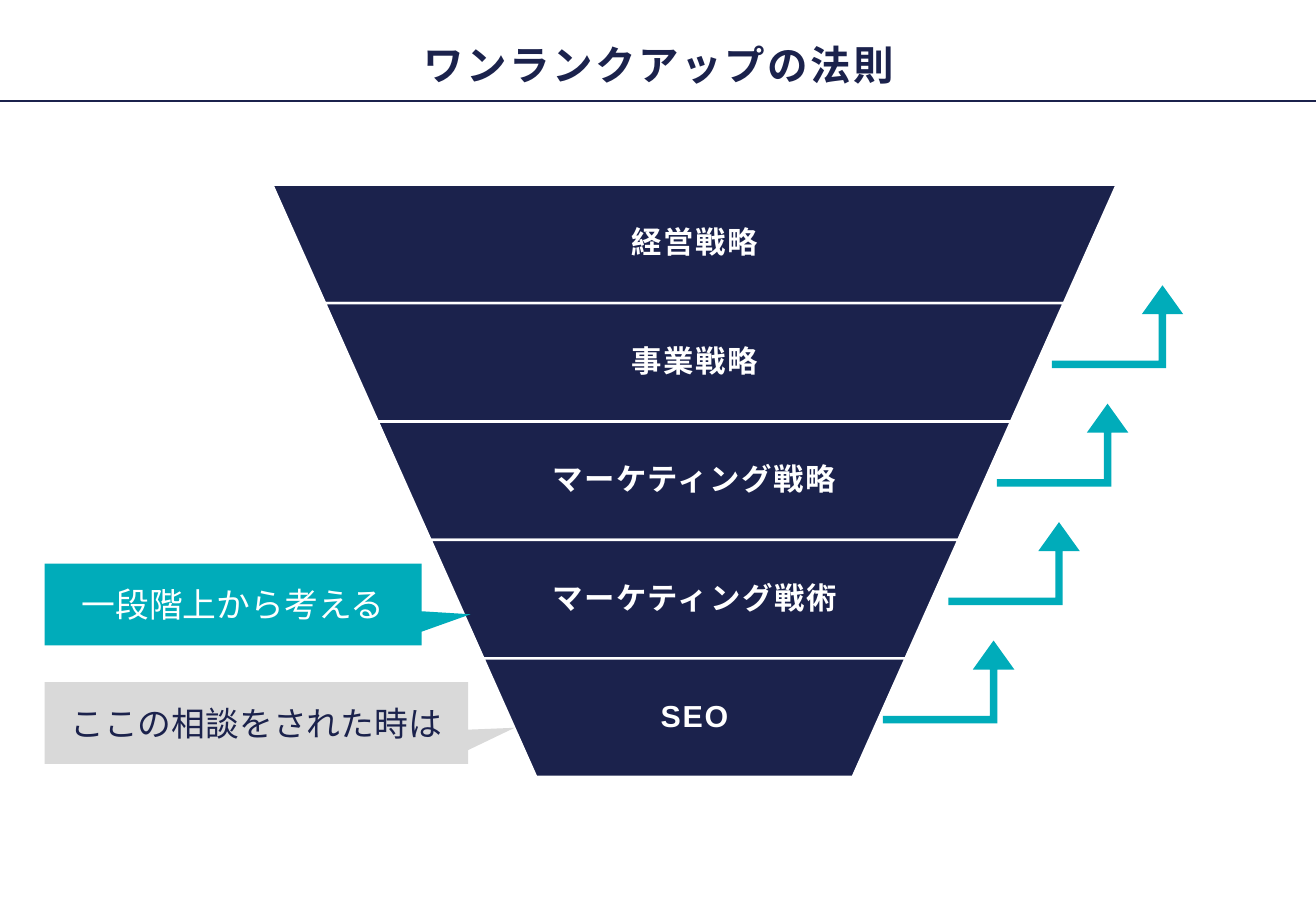
import dataclasses

import lxml.etree
import pptx
import pptx.dml.color
import pptx.enum.shapes
import pptx.enum.text
import pptx.oxml.ns
import pptx.util

SHAPES = pptx.enum.shapes.MSO_SHAPE
COLORS = {"navy": "1B224C", "teal": "00ACBA", "gray": "D9D9D9", "white": "FFFFFF"}
FONT = "Arial"

# Grid: the funnel's top edge spans 16 columns and it narrows one column a side per row
SLIDE_W, SLIDE_H = 10.83, 7.5
LEFT, TOP = 2.24, 1.52
TOP_COLS = 16
COL, ROW = 6.95 / TOP_COLS, SLIDE_H * 0.13


@dataclasses.dataclass
class Callout:
    text: str
    row: float
    cols: float
    fill: str
    color: str
    tip: tuple[float, float]


@dataclasses.dataclass
class Arrow:
    col: float
    row: float


BANDS = ["経営戦略", "事業戦略", "マーケティング戦略", "マーケティング戦術", "SEO"]
CALLOUTS = [
    Callout("一段階上から考える", 3.2, 7.14, "teal", "white", (0.63, 0.12)),
    Callout("ここの相談をされた時は", 4.2, 8.02, "gray", "navy", (0.61, 0.06)),
]
ARROWS = [Arrow(col, i + 0.85) for i, col in enumerate([14.77, 13.73, 12.81, 11.57])]


def x(col: float) -> int:
    return pptx.util.Inches(LEFT + col * COL)


def y(row: float) -> int:
    return pptx.util.Inches(TOP + row * ROW)


def rgb(name: str) -> pptx.dml.color.RGBColor:
    return pptx.dml.color.RGBColor.from_string(COLORS[name])


def write(sp, text: str, size: int, color: str, bold: bool = False,
          tracking: float = 0, line_spacing: float = 1.0) -> None:
    tf = sp.text_frame
    tf.vertical_anchor = pptx.enum.text.MSO_ANCHOR.MIDDLE
    p = tf.paragraphs[0]
    p.alignment = pptx.enum.text.PP_ALIGN.CENTER
    p.line_spacing = line_spacing
    p.font.name, p.font.size, p.font.bold = FONT, pptx.util.Pt(size), bold
    p.font.color.rgb = rgb(color)
    r = p.add_run()
    r.text = text
    if tracking:
        r._r.get_or_add_rPr().set("spc", str(int(tracking * 100)))


def paint(sp, fill: str) -> None:
    sp.shadow.inherit = False
    sp.fill.solid()
    sp.fill.fore_color.rgb = rgb(fill)
    sp.line.fill.background()


def add_header(slide, text: str) -> None:
    rule_y = pptx.util.Inches(0.83)
    line = slide.shapes.add_connector(pptx.enum.shapes.MSO_CONNECTOR.STRAIGHT,
                                      0, rule_y, pptx.util.Inches(SLIDE_W), rule_y)
    line.line.color.rgb = rgb("navy")
    line.line.width = pptx.util.Pt(1)
    lxml.etree.SubElement(line._element.spPr, pptx.oxml.ns.qn("a:effectLst"))

    sp = slide.shapes.title
    sp.left, sp.top, sp.width, sp.height = map(pptx.util.Inches, (0.5, 0.17, 9.84, 0.52))
    tf = sp.text_frame
    tf.auto_size = pptx.enum.text.MSO_AUTO_SIZE.NONE
    tf.word_wrap = False
    tf.margin_left = tf.margin_right = tf.margin_top = tf.margin_bottom = pptx.util.Inches(0.04)
    write(sp, text, 24, "navy", True, 1.5, 1.5)


def add_band(slide, row: int, text: str) -> None:
    builder = slide.shapes.build_freeform(x(row), y(row))
    builder.add_line_segments([
        (x(TOP_COLS - row), y(row)),
        (x(TOP_COLS - row - 1), y(row + 1)),
        (x(row + 1), y(row + 1)),
    ])
    sp = builder.convert_to_shape()
    paint(sp, "navy")
    sp.line.color.rgb = rgb("white")
    sp.line.width = pptx.util.Pt(1.5)
    sp.text_frame.margin_top = sp.text_frame.margin_bottom = pptx.util.Inches(0.03)
    write(sp, text, 18, "white", True, 1, 0.9)


def add_callout(slide, callout: Callout) -> None:
    sp = slide.shapes.add_shape(SHAPES.RECTANGULAR_CALLOUT, x(-4.31), y(callout.row),
                                int(callout.cols * pptx.util.Inches(COL)),
                                pptx.util.Inches(0.69 * ROW))
    sp.adjustments[0], sp.adjustments[1] = callout.tip
    paint(sp, callout.fill)
    sp.text_frame.word_wrap = True
    write(sp, callout.text, 20, callout.color)


def add_arrow(slide, arrow: Arrow) -> None:
    sp = slide.shapes.add_shape(SHAPES.BENT_UP_ARROW, x(arrow.col), y(arrow.row),
                                pptx.util.Inches(2.49 * COL), pptx.util.Inches(0.7 * ROW))
    for i, value in enumerate((0.09, 0.25, 0.35)):
        sp.adjustments[i] = value
    paint(sp, "teal")


def main() -> None:
    prs = pptx.Presentation()
    prs.slide_width = pptx.util.Inches(SLIDE_W)
    prs.slide_height = pptx.util.Inches(SLIDE_H)
    slide = prs.slides.add_slide(prs.slide_layouts[5])

    add_header(slide, "ワンランクアップの法則")
    for row, text in enumerate(BANDS):
        add_band(slide, row, text)
    for callout in CALLOUTS:
        add_callout(slide, callout)
    for arrow in ARROWS:
        add_arrow(slide, arrow)

    prs.save("out.pptx")


if __name__ == "__main__":
    main()
